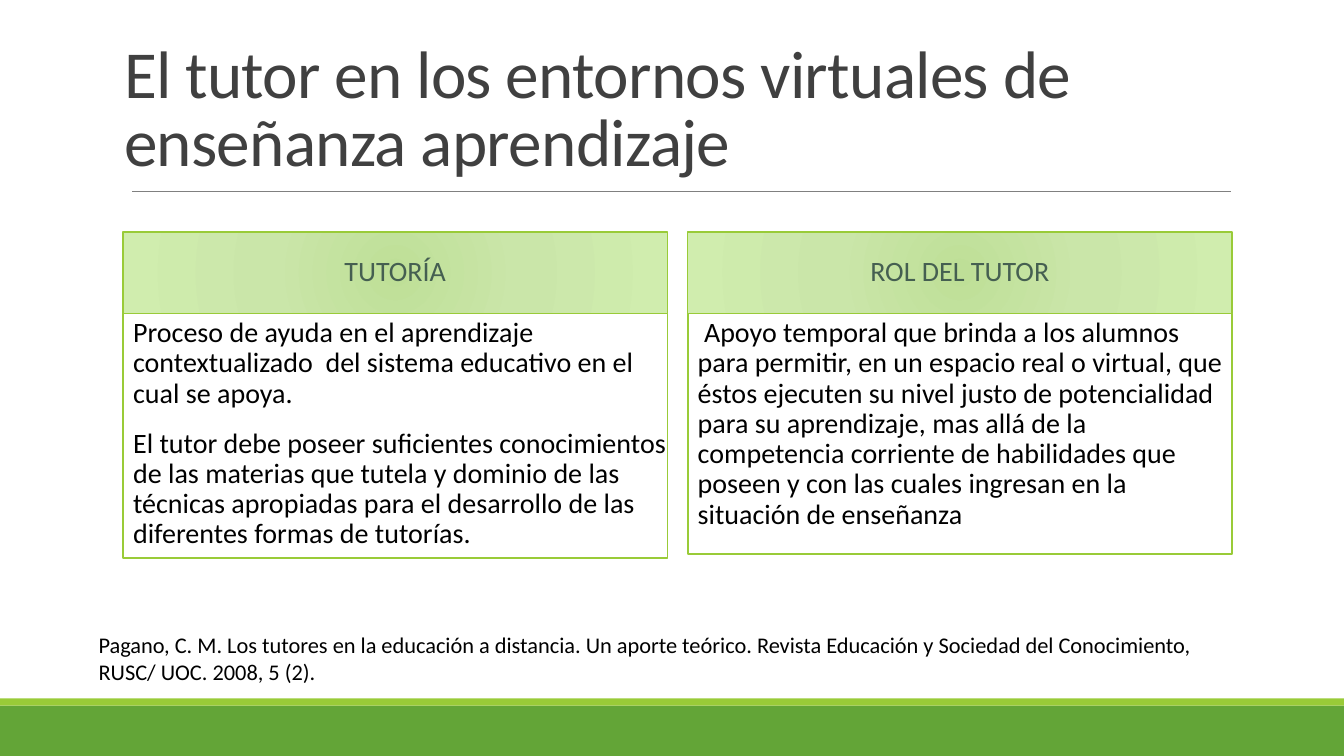
from lxml.etree import SubElement
from pptx import Presentation
from pptx.dml.color import RGBColor
from pptx.enum.shapes import MSO_CONNECTOR, MSO_SHAPE
from pptx.enum.text import MSO_ANCHOR, MSO_AUTO_SIZE, PP_ALIGN
from pptx.oxml import parse_xml
from pptx.oxml.ns import nsdecls, qn
from pptx.util import Inches, Pt

COLORS = {
    "title": "404040", "heading": "455F51", "text": "000000",
    "white": "FFFFFF", "rule": "808080", "green": "63A537", "lime": "99CB38",
}
HEADER_STOPS = [(0, "BEDF97"), (45, "CAE6A9"), (100, "D0EDAE")]

TITLE = "El tutor en los entornos virtuales de enseñanza aprendizaje"
COLUMNS = [
    ("TUTORÍA", 2.43, [
        "Proceso de ayuda en el aprendizaje contextualizado  del sistema "
        "educativo en el cual se apoya.",
        "El tutor debe poseer suficientes conocimientos de las materias que "
        "tutela y dominio de las técnicas apropiadas para el desarrollo de "
        "las diferentes formas de tutorías.",
    ]),
    ("ROL DEL TUTOR", 2.39, [
        " Apoyo temporal que brinda a los alumnos para permitir, en un "
        "espacio real o virtual, que éstos ejecuten su nivel justo de "
        "potencialidad para su aprendizaje, mas allá de la competencia "
        "corriente de habilidades que poseen y con las cuales ingresan en la "
        "situación de enseñanza",
    ]),
]
REFERENCE = (
    "Pagano, C. M. Los tutores en la educación a distancia. Un aporte "
    "teórico. Revista Educación y Sociedad del Conocimiento, RUSC/ UOC. "
    "2008, 5 (2)."
)


def rgb(name):
    return RGBColor.from_string(COLORS[name])


def write(p, text, size, color, align=PP_ALIGN.LEFT, spacing=1.0,
          before=0, after=0, tracking=None):
    """Put formatted text in a paragraph; tracking is in points."""
    p.alignment, p.line_spacing = align, spacing
    p.space_before, p.space_after = Pt(before), Pt(after)
    r = p.add_run()
    r.text = text
    r.font.name, r.font.size, r.font.bold = "Calibri", Pt(size), False
    r.font.color.rgb = rgb(color)
    if tracking is not None:
        r.font._element.set("spc", str(int(tracking * 100)))


def set_blank_bullet(p):
    """Hang the paragraph on a blank bullet 0.1 inch wide."""
    pPr = p._p.get_or_add_pPr()
    pPr.set("marL", str(Inches(0.1)))
    pPr.set("indent", str(-Inches(0.1)))
    clr = SubElement(pPr, qn("a:buClr"))
    SubElement(clr, qn("a:srgbClr"), val=COLORS["lime"])
    SubElement(pPr, qn("a:buFont"), typeface="Calibri")
    SubElement(pPr, qn("a:buChar"), char=" ")


def set_radial_fill(sp, stops):
    sp.fill.background()
    no_fill = sp._element.spPr.find(qn("a:noFill"))
    gs = "".join(
        f'<a:gs pos="{pos * 1000}"><a:srgbClr val="{color}"/></a:gs>'
        for pos, color in stops)
    grad = parse_xml(
        f'<a:gradFill {nsdecls("a")} rotWithShape="1"><a:gsLst>{gs}</a:gsLst>'
        '<a:path path="circle"><a:fillToRect l="100000" t="100000" '
        'r="100000" b="100000"/></a:path></a:gradFill>')
    sp._element.spPr.replace(no_fill, grad)


class SlideBuilder:
    def __init__(self, prs):
        self.slide = prs.slides.add_slide(prs.slide_layouts[4])
        self.holders = {sp.placeholder_format.idx: sp
                        for sp in self.slide.placeholders}

    def place(self, idx, x, y, w, h, anchor):
        """Move a placeholder and return it."""
        sp = self.holders[idx]
        sp.left, sp.top = Inches(x), Inches(y)
        sp.width, sp.height = Inches(w), Inches(h)
        tf = sp.text_frame
        tf.word_wrap, tf.auto_size = True, MSO_AUTO_SIZE.NONE
        tf.vertical_anchor = anchor
        return sp

    def outline(self, sp, width):
        sp.line.color.rgb, sp.line.width = rgb("lime"), Pt(width)

    def band(self, y, h, color):
        sp = self.slide.shapes.add_shape(
            MSO_SHAPE.RECTANGLE, 0, Inches(y), Inches(13.33), Inches(h))
        sp.shadow.inherit = False
        sp.fill.solid()
        sp.fill.fore_color.rgb = rgb(color)
        sp.line.fill.background()

    def rule(self, x1, x2, y):
        line = self.slide.shapes.add_connector(
            MSO_CONNECTOR.STRAIGHT, Inches(x1), Inches(y), Inches(x2), Inches(y))
        line.line.color.rgb, line.line.width = rgb("rule"), Pt(0.5)
        SubElement(line._element.spPr, qn("a:effectLst"))

    def title(self, text):
        sp = self.place(0, 1.13, 0.25, 11, 1.59, MSO_ANCHOR.BOTTOM)
        write(sp.text_frame.paragraphs[0], text, 48, "title",
              spacing=0.85, tracking=-0.5)

    def header(self, idx, x, text):
        sp = self.place(idx, x, 2.3, 5.4, 0.81, MSO_ANCHOR.MIDDLE)
        set_radial_fill(sp, HEADER_STOPS)
        self.outline(sp, 1)
        write(sp.text_frame.paragraphs[0], text, 20, "heading",
              align=PP_ALIGN.CENTER, spacing=0.9, before=12, after=2)

    def body(self, idx, x, h, texts):
        sp = self.place(idx, x, 3.11, 5.4, h, MSO_ANCHOR.TOP)
        sp.fill.solid()
        sp.fill.fore_color.rgb = rgb("white")
        self.outline(sp, 1.25)
        tf = sp.text_frame
        tf.margin_left = tf.margin_right = 0
        tf.margin_top = tf.margin_bottom = Inches(0.05)
        for i, text in enumerate(texts):
            p = tf.add_paragraph() if i else tf.paragraphs[0]
            write(p, text, 20, "text", spacing=0.9, before=12, after=2)
            set_blank_bullet(p)

    def reference(self, text):
        sp = self.slide.shapes.add_textbox(
            Inches(0.88), Inches(6.21), Inches(11.46), Inches(0.94))
        tf = sp.text_frame
        tf.word_wrap, tf.auto_size = True, MSO_AUTO_SIZE.SHAPE_TO_FIT_TEXT
        write(tf.paragraphs[0], text, 16, "text")


def main():
    prs = Presentation()
    prs.slide_width, prs.slide_height = Inches(13.33), Inches(7.5)
    s = SlideBuilder(prs)
    s.band(7, 0.5, "green")
    s.band(6.93, 0.07, "lime")
    s.rule(1.31, 12.21, 1.9)
    s.title(TITLE)
    for i, (heading, height, texts) in enumerate(COLUMNS):
        x = 1.22 + 5.6 * i
        s.header(2 * i + 1, x, heading)
        s.body(2 * i + 2, x, height, texts)
    s.reference(REFERENCE)
    prs.save("out.pptx")


if __name__ == "__main__":
    main()
